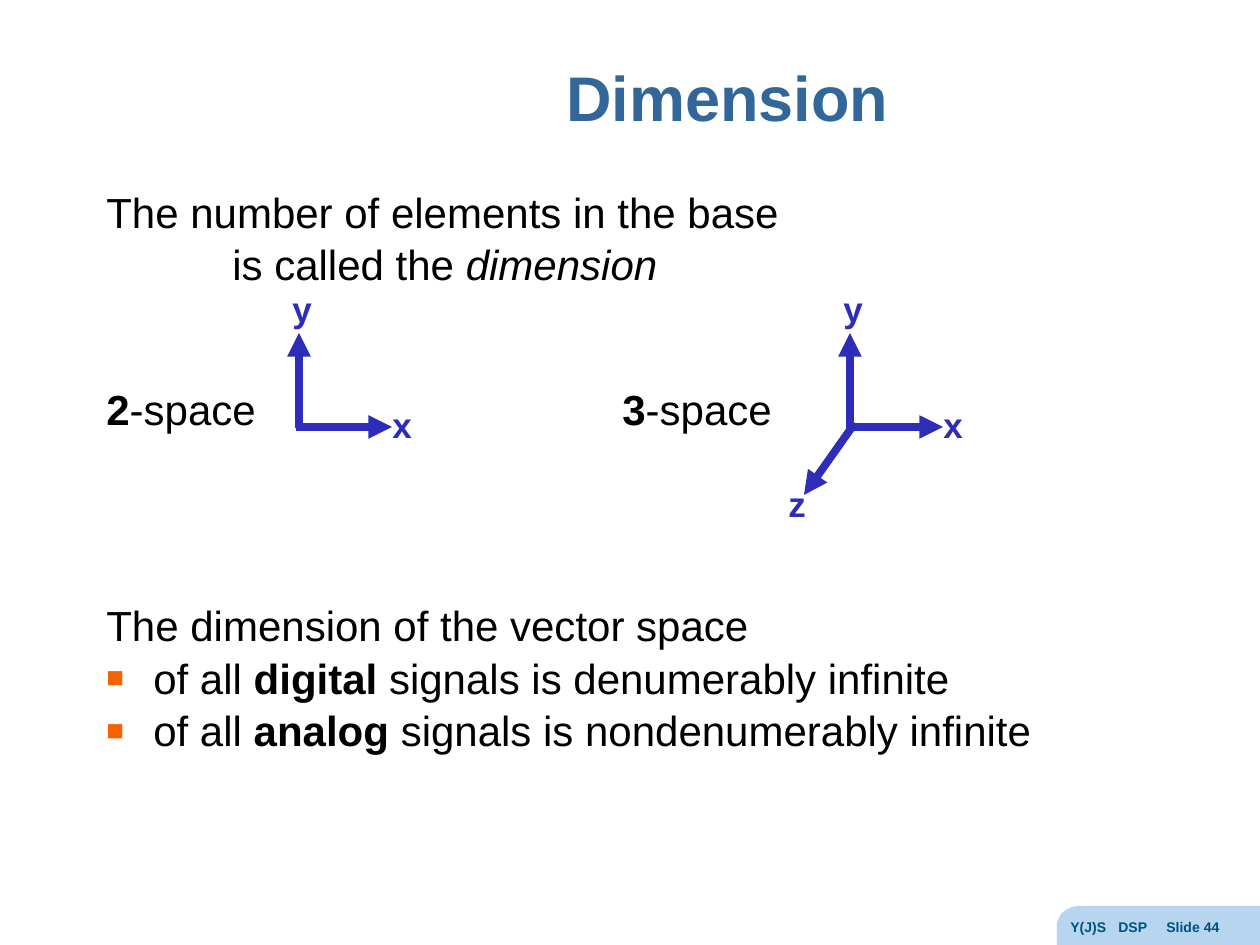
"""Build the Dimension slide: definition, 2-space and 3-space axes, and infinite cases."""
from lxml import etree
from pptx import Presentation
from pptx.dml.color import RGBColor
from pptx.enum.shapes import MSO_CONNECTOR
from pptx.enum.text import MSO_ANCHOR, PP_ALIGN
from pptx.oxml.ns import qn
from pptx.util import Pt

PX = 914400 // 126
LINE, MIDDLE, CENTER = MSO_CONNECTOR.STRAIGHT, MSO_ANCHOR.MIDDLE, PP_ALIGN.CENTER
BLACK, BLUE, ORANGE, PALE, NAVY, TITLE = (
    "000000", "2D2DB9", "F46300", "B7D5EF", "005081", "336699")


def add_runs(p, runs, size, color, bold=False):
    for text, style in runs:
        r = p.add_run()
        r.text = text
        fmt = {"name": "Arial", "size": Pt(size), "bold": bold, **style}
        for key, value in fmt.items():
            setattr(r.font, key, value)
        r.font.color.rgb = RGBColor.from_string(color)


def add_xml(parent, tag, **attrs):
    return etree.SubElement(parent, qn(tag), {k: str(v) for k, v in attrs.items()})


prs = Presentation()
prs.slide_width, prs.slide_height = 1260 * PX, 945 * PX
s = prs.slides.add_slide(prs.slide_layouts[5])

outline = [(1260, 906), (1260, 945), (1057, 945), (1057, 925), (1058, 920),
           (1061, 914), (1066, 910), (1072, 907), (1078, 906)]
fb = s.shapes.build_freeform(*outline[0], scale=PX)
fb.add_line_segments(outline[1:], close=True)
sp = fb.convert_to_shape()
sp.shadow.inherit = False
sp.fill.solid()
sp.fill.fore_color.rgb = RGBColor.from_string(PALE)
sp.line.fill.background()

sp = s.shapes.title
sp.left, sp.top, sp.width, sp.height = [v * PX for v in (267, 23, 921, 157)]
tf = sp.text_frame
tf.vertical_anchor = MIDDLE
p = tf.paragraphs[0]
p.alignment, p.line_spacing = CENTER, 0.9
add_runs(p, [("Dimension", {})], 36, TITLE, True)

BOLD = {"bold": True}
body = [
    (1.2, {}, None, [("The number of elements in the base", {})]),
    (1.2, {"marL": 126 * PX}, None,
     [("is called the ", {}), ("dimension", {"italic": True})]),
    (54, {}, 516, [("2", BOLD), ("-space\t", {}), ("3", BOLD), ("-space", {})]),
    (94.7, {}, None, [("The dimension of the vector space", {})]),
]
for kind, size in (("digital", "denumerably"), ("analog", "nondenumerably")):
    body.append((1.2, {"marL": 47 * PX, "indent": -47 * PX}, None,
                 [("of all ", {}), (kind, BOLD), (f" signals is {size} infinite", {})]))

tf = s.shapes.add_textbox(*[v * PX for v in (94, 180, 1071, 662)]).text_frame
tf.word_wrap = True
for i, (gap, indents, tab, runs) in enumerate(body):
    p = tf.add_paragraph() if i else tf.paragraphs[0]
    p.space_before = Pt(gap)
    add_runs(p, runs, 24, BLACK)
    pPr = p._p.get_or_add_pPr()
    for key, value in indents.items():
        pPr.set(key, str(value))
    if "indent" in indents:
        add_xml(add_xml(pPr, "a:buClr"), "a:srgbClr", val=ORANGE)
        add_xml(pPr, "a:buSzPct", val=70000)
        add_xml(pPr, "a:buFont", typeface="Arial")
        add_xml(pPr, "a:buChar", char="■")
    if tab:
        add_xml(add_xml(pPr, "a:tabLst"), "a:tab", pos=tab * PX, algn="l")

tf = s.shapes.add_textbox(*[v * PX for v in (1058, 912, 202, 33)]).text_frame
tf.word_wrap = True
p = tf.paragraphs[0]
add_runs(p, [("Y(J)S\tDSP\tSlide 44", {})], 8, NAVY, True)
tabs = add_xml(p._p.get_or_add_pPr(), "a:tabLst")
for pos in (48, 96):
    add_xml(tabs, "a:tab", pos=pos * PX, algn="l")

axes = [
    ("y", (0, 428, 0, 333), (-19, 281)),
    ("x", (-3, 427, 93, 427), (81, 397)),
    ("z", (5, 423, -46, 495), (-74, 476)),
]
for origin, count in ((299, 2), (850, 3)):
    for name, (x1, y1, x2, y2), (left, top) in axes[:count]:
        ends = (origin + x1, y1, origin + x2, y2)
        line = s.shapes.add_connector(LINE, *[v * PX for v in ends])
        line.line.width = Pt(4.5)
        line.line.color.rgb = RGBColor.from_string(BLUE)
        add_xml(line.line._get_or_add_ln(), "a:tailEnd", type="triangle")
        add_xml(line._element.spPr, "a:effectLst")
        box = (origin + left, top, 50, 55)
        tf = s.shapes.add_textbox(*[v * PX for v in box]).text_frame
        tf.word_wrap = True
        add_runs(tf.paragraphs[0], [(name, {})], 20, BLUE, True)

prs.save("out.pptx")
